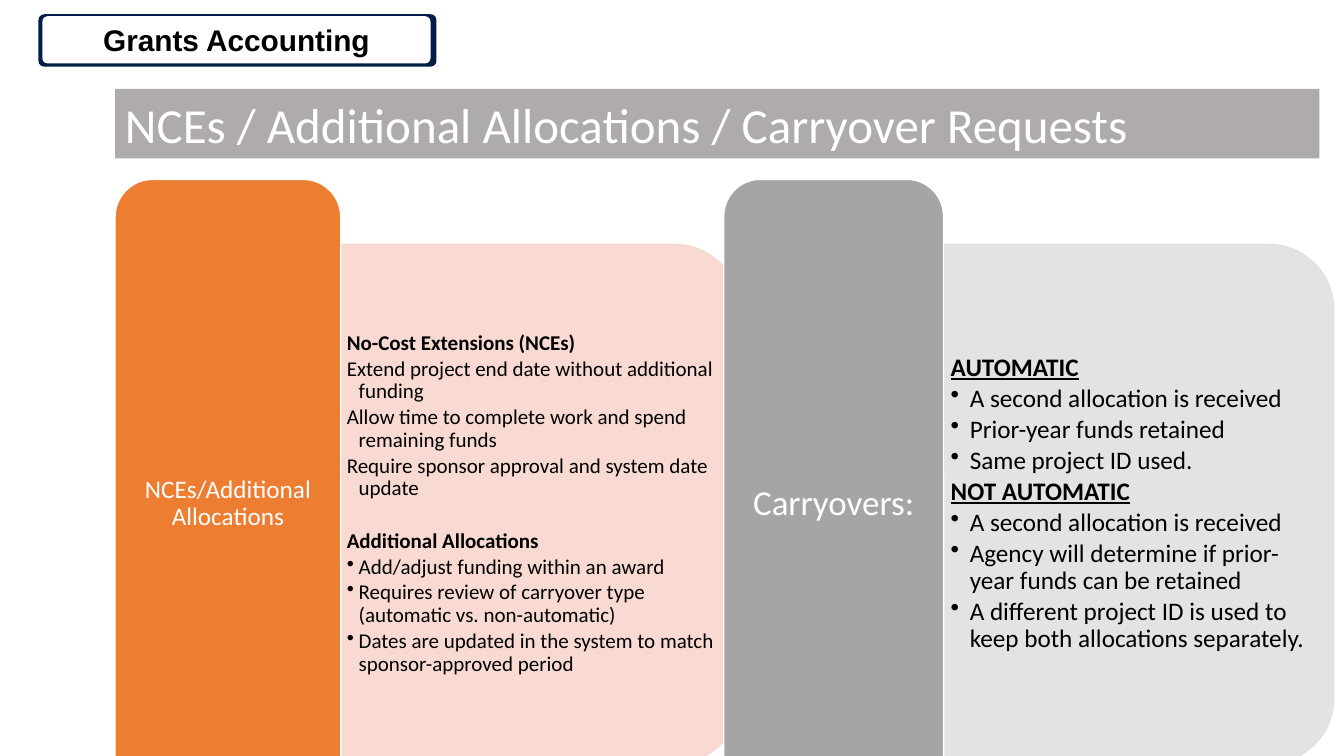
from lxml.etree import SubElement
from pptx import Presentation
from pptx.dml.color import RGBColor
from pptx.enum.shapes import MSO_SHAPE
from pptx.enum.text import MSO_ANCHOR, MSO_AUTO_SIZE, PP_ALIGN
from pptx.oxml.ns import qn
from pptx.util import Cm, Pt

BLACK = RGBColor(0x00, 0x00, 0x00)
WHITE = RGBColor(0xFF, 0xFF, 0xFF)
NAVY = RGBColor(0x00, 0x1E, 0x47)
BANNER = RGBColor(0xAF, 0xAB, 0xAB)
ORANGE = RGBColor(0xED, 0x7D, 0x31)
PEACH = RGBColor(0xF8, 0xD7, 0xCE)
GRAY = RGBColor(0xA5, 0xA5, 0xA5)
PALE = RGBColor(0xE1, 0xE1, 0xE1)

COLUMN_TOP, COLUMN_HEIGHT = 4.52, 16.36
PANEL_HEIGHT, TEXT_HEIGHT = 13.08, 12
MIDDLE = COLUMN_TOP + COLUMN_HEIGHT / 2

TOPICS = [
    {
        "label": "NCEs/Additional Allocations", "label_size": 18,
        "left": 2.9, "column_width": 5.69, "panel_width": 10.08,
        "color": ORANGE, "tint": PEACH,
        "size": 15, "indent": 0.3, "inset": 0.15, "gap": 19, "underline": False,
        "sections": [
            ("No-Cost Extensions (NCEs)", False, [
                "Extend project end date without additional funding",
                "Allow time to complete work and spend remaining funds",
                "Require sponsor approval and system date update"]),
            ("Additional Allocations", True, [
                "Add/adjust funding within an award",
                "Requires review of carryover type (automatic vs. non-automatic)",
                "Dates are updated in the system to match sponsor-approved period"]),
        ],
    },
    {
        "label": "Carryovers:", "label_size": 25,
        "left": 18.24, "column_width": 5.54, "panel_width": 9.83,
        "color": GRAY, "tint": PALE,
        "size": 18, "indent": 0.48, "inset": 0.18, "gap": 0, "underline": True,
        "sections": [
            ("AUTOMATIC", True, [
                "A second allocation is received",
                "Prior-year funds retained",
                "Same project ID used."]),
            ("NOT AUTOMATIC", True, [
                "A second allocation is received",
                "Agency will determine if prior-year funds can be retained",
                "A different project ID is used to keep both allocations separately."]),
        ],
    },
]


def assign(target, values):
    for name, value in values.items():
        setattr(target, name, value)


class SlideBuilder:
    font = "Calibri"

    def __init__(self, prs):
        self.s = prs.slides.add_slide(prs.slide_layouts[5])

    def frame(self, sp, inset_x=0.25, inset_y=0.13):
        tf = sp.text_frame
        assign(tf, {"word_wrap": True, "auto_size": MSO_AUTO_SIZE.NONE,
                    "vertical_anchor": MSO_ANCHOR.MIDDLE,
                    "margin_left": Cm(inset_x), "margin_right": Cm(inset_x),
                    "margin_top": Cm(inset_y), "margin_bottom": Cm(inset_y)})
        return tf

    def add_text(self, p, text, size, color, align=PP_ALIGN.LEFT, spacing=1.0, **font):
        assign(p, {"alignment": align, "line_spacing": spacing})
        r = p.add_run()
        r.text = text
        assign(r.font, {"name": self.font, "size": Pt(size), **font})
        r.font.color.rgb = color

    def title(self, text, left, top, width, height):
        sp = self.s.shapes.title
        assign(sp, {"left": Cm(left), "top": Cm(top),
                    "width": Cm(width), "height": Cm(height)})
        sp.fill.solid()
        sp.fill.fore_color.rgb = BANNER
        self.add_text(self.frame(sp).paragraphs[0], text, 35, WHITE)

    def shape(self, kind, left, top, width, height, fill, line=None):
        sp = self.s.shapes.add_shape(kind, Cm(left), Cm(top), Cm(width), Cm(height))
        sp.shadow.inherit = False
        sp.fill.solid()
        sp.fill.fore_color.rgb = fill
        if line is None:
            sp.line.fill.background()
        else:
            sp.line.color.rgb = line
            sp.line.width = Pt(1)
        return sp

    def panel(self, left, width, tint):
        sp = self.shape(MSO_SHAPE.ROUND_2_SAME_RECTANGLE,
                        left + (width - PANEL_HEIGHT) / 2, MIDDLE - width / 2,
                        PANEL_HEIGHT, width, tint, tint)
        sp.rotation = 90
        for color in sp._element.spPr.iter(qn("a:srgbClr")):
            SubElement(color, qn("a:alpha"), val="90000")

    def details(self, left, width, topic):
        sp = self.s.shapes.add_textbox(Cm(left), Cm(MIDDLE - TEXT_HEIGHT / 2),
                                       Cm(width), Cm(TEXT_HEIGHT))
        tf = self.frame(sp, topic["inset"], topic["inset"] / 2)
        p = tf.paragraphs[0]
        for number, (heading, bulleted, lines) in enumerate(topic["sections"]):
            for row, text in enumerate([heading, *lines]):
                is_heading = row == 0
                if number or row:
                    p = tf.add_paragraph()
                self.indent(p, topic["indent"], bulleted and not is_heading)
                p.space_after = Pt(0.15 * topic["size"])
                if number and is_heading:
                    p.space_before = Pt(topic["gap"])
                self.add_text(p, text, topic["size"], BLACK, spacing=0.9, bold=is_heading,
                              underline=is_heading and topic["underline"])

    def indent(self, p, hang, bulleted):
        pPr = p._p.get_or_add_pPr()
        pPr.set("marL", str(Cm(hang)))
        pPr.set("indent", str(-Cm(hang)))
        if bulleted:
            SubElement(pPr, qn("a:buChar"), char="•")
        else:
            SubElement(pPr, qn("a:buNone"))

    def column(self, topic):
        sp = self.shape(MSO_SHAPE.ROUNDED_RECTANGLE, topic["left"], COLUMN_TOP,
                        topic["column_width"], COLUMN_HEIGHT, topic["color"], WHITE)
        self.add_text(self.frame(sp, 0.2, 0.1).paragraphs[0], topic["label"],
                      topic["label_size"], WHITE, PP_ALIGN.CENTER, 0.9)

    def topic(self, topic):
        left = topic["left"] + topic["column_width"]
        self.panel(left, topic["panel_width"], topic["tint"])
        self.details(left, topic["panel_width"] - 0.48, topic)
        self.column(topic)

    def badge(self, text):
        for box, fill in (((0.97, 0.36, 10.03, 1.32), NAVY),
                          ((1.07, 0.41, 9.78, 1.19), WHITE)):
            sp = self.shape(MSO_SHAPE.ROUNDED_RECTANGLE, *box, fill)
            sp.adjustments[0] = 0.11
        self.add_text(self.frame(sp).paragraphs[0], text, 21.3, BLACK,
                      PP_ALIGN.CENTER, bold=True, name="Arial")


def main():
    prs = Presentation()
    assign(prs, {"slide_width": Cm(33.87), "slide_height": Cm(19.05)})
    builder = SlideBuilder(prs)
    builder.title("NCEs / Additional Allocations / Carryover Requests",
                  2.9, 2.24, 30.35, 1.75)
    for topic in TOPICS:
        builder.topic(topic)
    builder.badge("Grants Accounting")
    prs.save("out.pptx")


if __name__ == "__main__":
    main()
